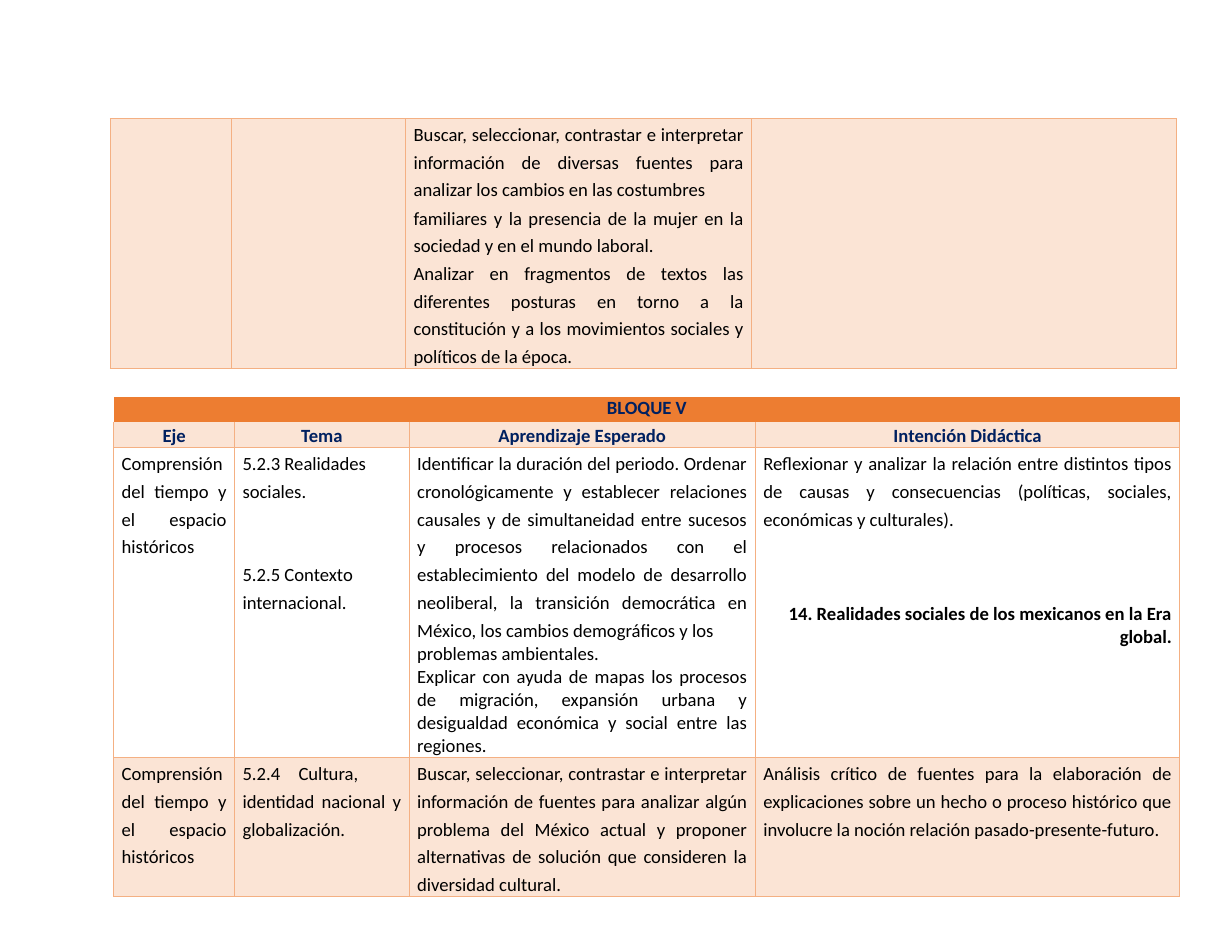
"""Build the history curriculum slide with its two planning tables."""
import pptx
import pptx.dml.color
import pptx.enum.text
import pptx.util
from lxml import etree

Cm = pptx.util.Cm
Pt = pptx.util.Pt
ALIGN = pptx.enum.text.PP_ALIGN
COLORS = {"border": "F4B083", "tint": "FBE4D5", "title": "ED7D31",
          "heading": "002060", "text": "000000"}
NO_STYLE = "{2D5ABB26-0587-4C30-8999-92F81FD0307C}"
COLUMN_WIDTHS = [2.74, 3.96, 7.85, 9.63]


def add_plain_table(slide, left, top, heights):
    frame = slide.shapes.add_table(len(heights), len(COLUMN_WIDTHS), Cm(left), Cm(top),
                                   Cm(sum(COLUMN_WIDTHS)), Cm(sum(heights)))
    table = frame.table
    table.first_row = False
    table.horz_banding = False
    table._tbl.tblPr.find(pptx.oxml.ns.qn("a:tableStyleId")).text = NO_STYLE
    for column, width in zip(table.columns, COLUMN_WIDTHS):
        column.width = Cm(width)
    for row, height in zip(table.rows, heights):
        row.height = Cm(height)
    return table


def fill_cell(cell, paragraphs, fill, sides, color="text"):
    cell.margin_left = cell.margin_right = Cm(0.18)
    cell.margin_top = cell.margin_bottom = 0
    properties = cell._tc.get_or_add_tcPr()
    for side in sides:
        line = etree.SubElement(properties, pptx.oxml.ns.qn("a:ln" + side), w=str(Pt(0.75)))
        solid = etree.SubElement(line, pptx.oxml.ns.qn("a:solidFill"))
        etree.SubElement(solid, pptx.oxml.ns.qn("a:srgbClr"), val=COLORS[border_color])
    if fill:
        cell.fill.solid()
        cell.fill.fore_color.rgb = pptx.dml.color.RGBColor.from_string(COLORS[fill])
    else:
        cell.fill.background()
    for index, (text, align, spacing, before, bold) in enumerate(paragraphs):
        frame = cell.text_frame
        para = frame.add_paragraph() if index else frame.paragraphs[0]
        para.text = text
        para.alignment = align
        para.line_spacing = spacing
        para.space_before = Pt(before)
        for span in para.runs:
            span.font.name = "Calibri"
            span.font.size = Pt(12)
            span.font.bold = bold
            span.font.color.rgb = pptx.dml.color.RGBColor.from_string(COLORS[color])


border_color = "border"
JUSTIFY, LEFT, RIGHT, CENTER = ALIGN.JUSTIFY, ALIGN.LEFT, ALIGN.RIGHT, ALIGN.CENTER
axis = [("Comprensión del tiempo y el espacio históricos", JUSTIFY, 1.22, 0, False)]

continued_row = [
    [],
    [],
    [("Buscar, seleccionar, contrastar e interpretar información de diversas fuentes para "
      "analizar los cambios en las costumbres", JUSTIFY, 1.22, 0, False),
     ("familiares y la presencia de la mujer en la sociedad y en el mundo laboral.",
      JUSTIFY, 1.22, 0.3, False),
     ("Analizar en fragmentos de textos las diferentes posturas en torno a la constitución "
      "y a los movimientos sociales y políticos de la época.", JUSTIFY, 1.22, 0, False)],
    [],
]
headings = ["Eje", "Tema", "Aprendizaje Esperado", "Intención Didáctica"]
block_rows = [
    [axis,
     [("5.2.3 Realidades sociales.", LEFT, 1.22, 0, False),
      ("5.2.5 Contexto internacional.", LEFT, 1.22, 35.7, False)],
     [("Identificar la duración del periodo. Ordenar cronológicamente y establecer relaciones "
       "causales y de simultaneidad entre sucesos y procesos relacionados con el "
       "establecimiento del modelo de desarrollo neoliberal, la transición democrática en "
       "México, los cambios demográficos y los", JUSTIFY, 1.22, 0, False),
      ("problemas ambientales.", JUSTIFY, 1.0, 0.2, False),
      ("Explicar con ayuda de mapas los procesos de migración, expansión urbana y "
       "desigualdad económica y social entre las regiones.", JUSTIFY, 1.02, 0, False)],
     [("Reflexionar y analizar la relación entre distintos tipos de causas y consecuencias "
       "(políticas, sociales, económicas y culturales).", JUSTIFY, 1.22, 0, False),
      ("14. Realidades sociales de los mexicanos en la Era", RIGHT, 1.0, 45.8, True),
      ("global.", RIGHT, 1.0, 0.5, True)]],
    [axis,
     [("5.2.4\tCultura, identidad nacional y globalización.", JUSTIFY, 1.22, 0, False)],
     [("Buscar, seleccionar, contrastar e interpretar información de fuentes para analizar "
       "algún problema del México actual y proponer alternativas de solución que consideren "
       "la diversidad cultural.", JUSTIFY, 1.22, 0, False)],
     [("Análisis crítico de fuentes para la elaboración de explicaciones sobre un hecho o "
       "proceso histórico que involucre la noción relación pasado-presente-futuro.",
       JUSTIFY, 1.22, 0, False)]],
]

deck = pptx.Presentation()
deck.slide_width = Cm(27.94)
deck.slide_height = Cm(21.59)
slide = deck.slides.add_slide(deck.slide_layouts[6])

continued_table = add_plain_table(slide, 2.5, 2.69, [4.67])
for column, paragraphs in enumerate(continued_row):
    fill_cell(continued_table.cell(0, column), paragraphs, "tint", "LRTB")

block_table = add_plain_table(slide, 2.58, 9.0, [0.56, 0.53, 6.22, 2.59])
title_cell = block_table.cell(0, 0)
title_cell.merge(block_table.cell(0, 3))
fill_cell(title_cell, [("BLOQUE V", CENTER, 1.0, 0, True)], "title", "", "heading")
for column, heading in enumerate(headings):
    fill_cell(block_table.cell(1, column), [(heading, CENTER, 1.16, 0, True)],
              "tint", "LRB", "heading")
for row, (cells, fill) in enumerate(zip(block_rows, [None, "tint"]), start=2):
    for column, paragraphs in enumerate(cells):
        fill_cell(block_table.cell(row, column), paragraphs, fill, "LRTB")

deck.save("out.pptx")
